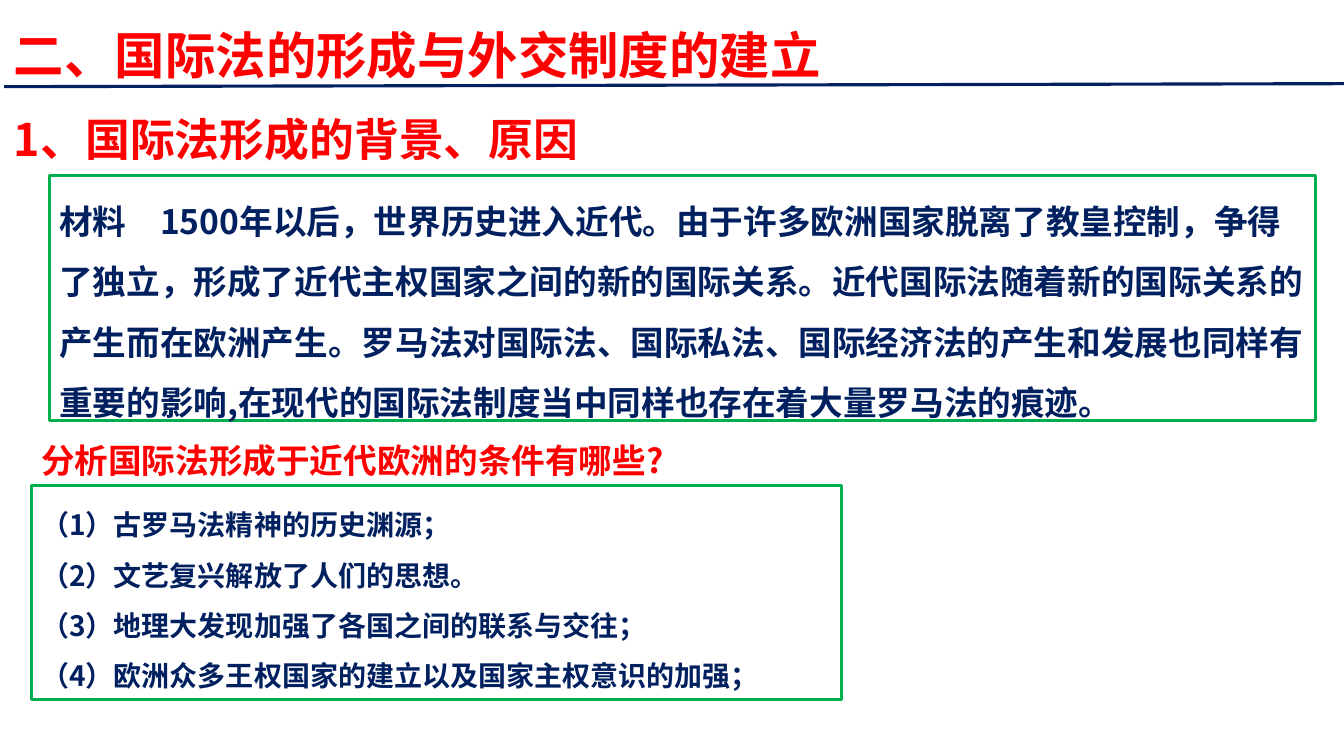
"""Build the slide on how international law took shape."""
from lxml.etree import SubElement
from pptx import Presentation
from pptx.dml.color import RGBColor
from pptx.enum.shapes import MSO_CONNECTOR as Link, MSO_SHAPE as Shape
from pptx.enum.text import MSO_ANCHOR as Anchor, MSO_AUTO_SIZE as Auto, PP_ALIGN as Align
from pptx.oxml.ns import qn
from pptx.util import Pt

PX = 9144
RED, NAVY, GREEN = "FF0000", "002060", "00B050"
JP, SC = "Noto Sans CJK JP", "Noto Sans CJK SC"


def color(code):
    return RGBColor.from_string(code)


def write(box, lines, size, face, ink, wrap=True, gap=1.0):
    frame = box.text_frame
    form = dict(word_wrap=wrap, auto_size=Auto.SHAPE_TO_FIT_TEXT, vertical_anchor=Anchor.TOP)
    for key, value in form.items():
        setattr(frame, key, value)
    for i, line in enumerate(lines):
        para = frame.add_paragraph() if i else frame.paragraphs[0]
        para.alignment, para.line_spacing = Align.LEFT, gap
        run = para.add_run()
        run.text = line
        for key, value in dict(size=Pt(size), name=face, bold=True).items():
            setattr(run.font, key, value)
        run.font.color.rgb = color(ink)
        SubElement(run.font._element, qn("a:ea"), typeface=face)


deck = Presentation()
deck.slide_width, deck.slide_height = 1333 * PX, 750 * PX
slide = deck.slides.add_slide(deck.slide_layouts[6])
shapes = slide.shapes

source = [
    "材料　1500年以后，世界历史进入近代。由于许多欧洲国家脱离了教皇控制，争得了独立，"
    "形成了近代主权国家之间的新的国际关系。近代国际法随着新的国际关系的产生而在欧洲产生。"
    "罗马法对国际法、国际私法、国际经济法的产生和发展也同样有重要的影响,"
    "在现代的国际法制度当中同样也存在着大量罗马法的痕迹。"
]
answers = [
    "（1）古罗马法精神的历史渊源；",
    "（2）文艺复兴解放了人们的思想。",
    "（3）地理大发现加强了各国之间的联系与交往；",
    "（4）欧洲众多王权国家的建立以及国家主权意识的加强；",
]
panels = [
    ((31, 482, 804, 212), answers, 20),
    ((49, 174, 1256, 243), source, 24),
]
for place, lines, size in panels:
    panel = shapes.add_shape(Shape.RECTANGLE, *(n * PX for n in place))
    panel.shadow.inherit = False
    panel.fill.background()
    panel.line.color.rgb = color(GREEN)
    panel.line.width = Pt(2)
    write(panel, lines, size, SC, NAVY, gap=1.5)

rule = shapes.add_connector(Link.STRAIGHT, 4 * PX, 86 * PX, 1334 * PX, 83 * PX)
rule.line.color.rgb = color(NAVY)
rule.line.width = Pt(2.25)
SubElement(rule._element.spPr, qn("a:effectLst"))

heads = [
    ((31, 432, 646, 50), "分析国际法形成于近代欧洲的条件有哪些?", 24, SC, False),
    ((4, 19, 831, 71), "二、国际法的形成与外交制度的建立", 36, JP, False),
    ((4, 106, 695, 64), "1、国际法形成的背景、原因", 32, JP, True),
]
for place, text, size, face, wrap in heads:
    head = shapes.add_textbox(*(n * PX for n in place))
    write(head, [text], size, face, RED, wrap)

deck.save("out.pptx")
